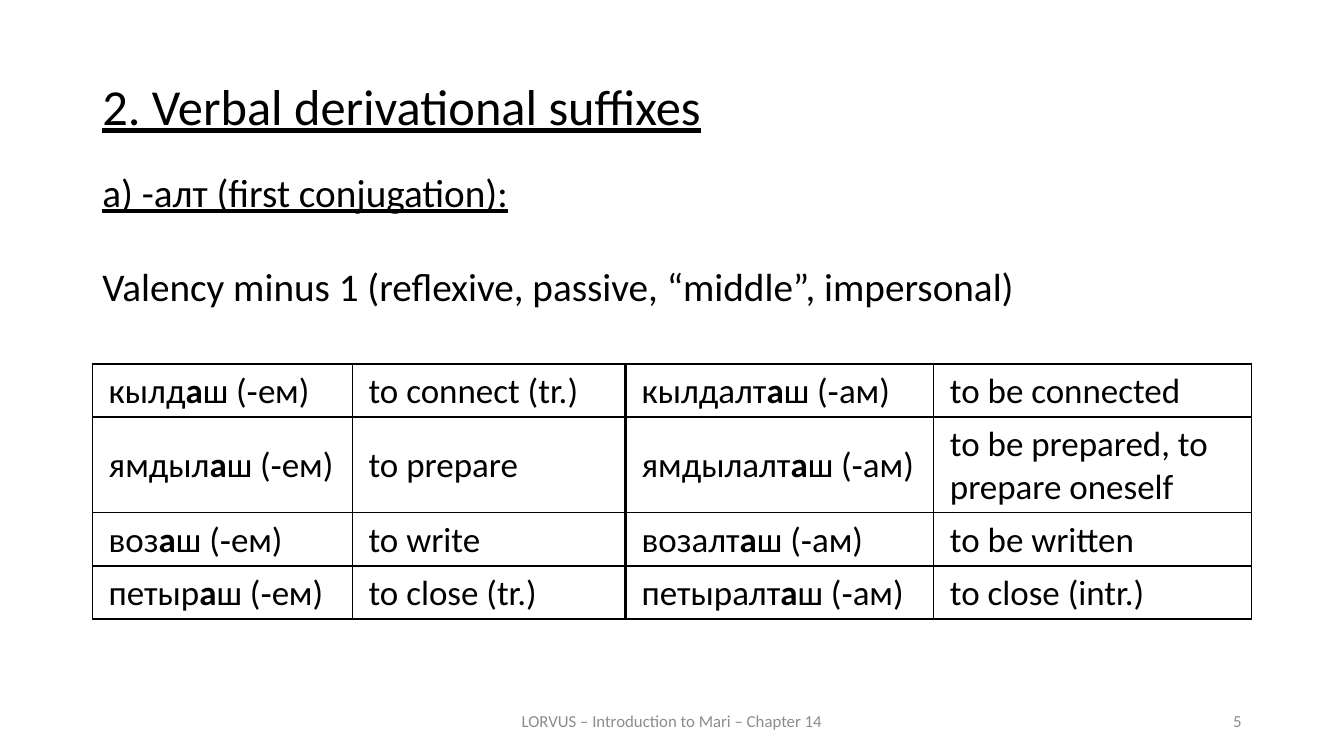
from lxml.etree import fromstring
from pptx import Presentation
from pptx.dml.color import RGBColor
from pptx.enum.text import MSO_ANCHOR, PP_ALIGN
from pptx.util import Cm, Pt

DRAWING_NS = "http://schemas.openxmlformats.org/drawingml/2006/main"


def style_run(run, size, color, underline=False, bold=False):
    run.font.name = "Calibri"
    run.font.size = Pt(size)
    run.font.color.rgb = RGBColor.from_string(color)
    run.font.underline = underline
    run.font.bold = bold


def set_border(cell, position, side, width):
    line = fromstring(
        f'<a:ln{side} xmlns:a="{DRAWING_NS}" w="{Pt(width)}">'
        '<a:solidFill><a:srgbClr val="000000"/></a:solidFill>'
        f'<a:prstDash val="solid"/></a:ln{side}>')
    cell._tc.get_or_add_tcPr().insert(position, line)


presentation = Presentation()
presentation.slide_width = Cm(33.87)
presentation.slide_height = Cm(19.05)
slide = presentation.slides.add_slide(presentation.slide_layouts[6])

LEFT, WIDTH = 2.33, 29.21

# Headings: text, top, height, size, space before, underline, alignment
headings = [
    ("2. Verbal derivational suffixes", 1.93, 2.11, 36, 12, True, PP_ALIGN.JUSTIFY),
    ("a) -алт (first conjugation):", 4.24, 1.47, 28, 10, True, PP_ALIGN.LEFT),
    ("Valency minus 1 (reflexive, passive, “middle”, impersonal)",
     6.63, 1.7, 28, 10, False, PP_ALIGN.LEFT),
]
for text, top, height, size, space_before, underline, alignment in headings:
    shape = slide.shapes.add_textbox(Cm(LEFT), Cm(top), Cm(WIDTH), Cm(height))
    shape.text_frame.word_wrap = True
    shape.text_frame.text = text
    paragraph = shape.text_frame.paragraphs[0]
    paragraph.alignment = alignment
    paragraph.line_spacing = 0.9
    paragraph.space_before = Pt(space_before)
    style_run(paragraph.runs[0], size, "000000", underline)

# Verb table: the stressed vowel stands between asterisks
verbs = [
    ("кылд*а*ш (‑ем)", "to connect (tr.)", "кылдалт*а*ш (‑ам)", "to be connected"),
    ("ямдыл*а*ш (‑ем)", "to prepare", "ямдылалт*а*ш (‑ам)",
     "to be prepared, to prepare oneself"),
    ("воз*а*ш (‑ем)", "to write", "возалт*а*ш (‑ам)", "to be written"),
    ("петыр*а*ш (‑ем)", "to close (tr.)", "петыралт*а*ш (‑ам)", "to close (intr.)"),
]
column_widths = [6.55, 6.88, 7.77, 8.01]
row_heights = [1.34, 2.41, 1.34, 1.34]
vertical_lines = [1.5, 1, 2.25, 1, 1.5]
horizontal_lines = [1.5, 1, 1, 1, 1.5]

table = slide.shapes.add_table(
    len(verbs), len(column_widths), Cm(LEFT), Cm(9.17),
    Cm(WIDTH), Cm(sum(row_heights))).table
table.first_row = False
table.horz_banding = False
for column, width in zip(table.columns, column_widths):
    column.width = Cm(width)
for row, height in zip(table.rows, row_heights):
    row.height = Cm(height)

for row_index, entries in enumerate(verbs):
    for column_index, entry in enumerate(entries):
        cell = table.cell(row_index, column_index)
        cell.fill.background()
        cell.vertical_anchor = MSO_ANCHOR.MIDDLE
        cell.margin_left = cell.margin_right = Cm(0.41)
        cell.margin_top, cell.margin_bottom = Cm(0.05), Cm(0)
        paragraph = cell.text_frame.paragraphs[0]
        for part_index, part in enumerate(entry.split("*")):
            run = paragraph.add_run()
            run.text = part
            style_run(run, 25, "000000", bold=part_index == 1)
        borders = [
            ("L", vertical_lines[column_index]),
            ("R", vertical_lines[column_index + 1]),
            ("T", horizontal_lines[row_index]),
            ("B", horizontal_lines[row_index + 1]),
        ]
        for position, (side, width) in enumerate(borders):
            set_border(cell, position, side, width)

# Footer and slide number
footers = [
    ("LORVUS – Introduction to Mari – Chapter 14", 11.22, 11.43, PP_ALIGN.CENTER),
    ("5", 23.92, 7.62, PP_ALIGN.RIGHT),
]
for text, left, width, alignment in footers:
    shape = slide.shapes.add_textbox(Cm(left), Cm(17.66), Cm(width), Cm(1.01))
    shape.text_frame.word_wrap = True
    shape.text_frame.vertical_anchor = MSO_ANCHOR.MIDDLE
    shape.text_frame.text = text
    paragraph = shape.text_frame.paragraphs[0]
    paragraph.alignment = alignment
    style_run(paragraph.runs[0], 12, "8C8C8C")

presentation.save("out.pptx")
